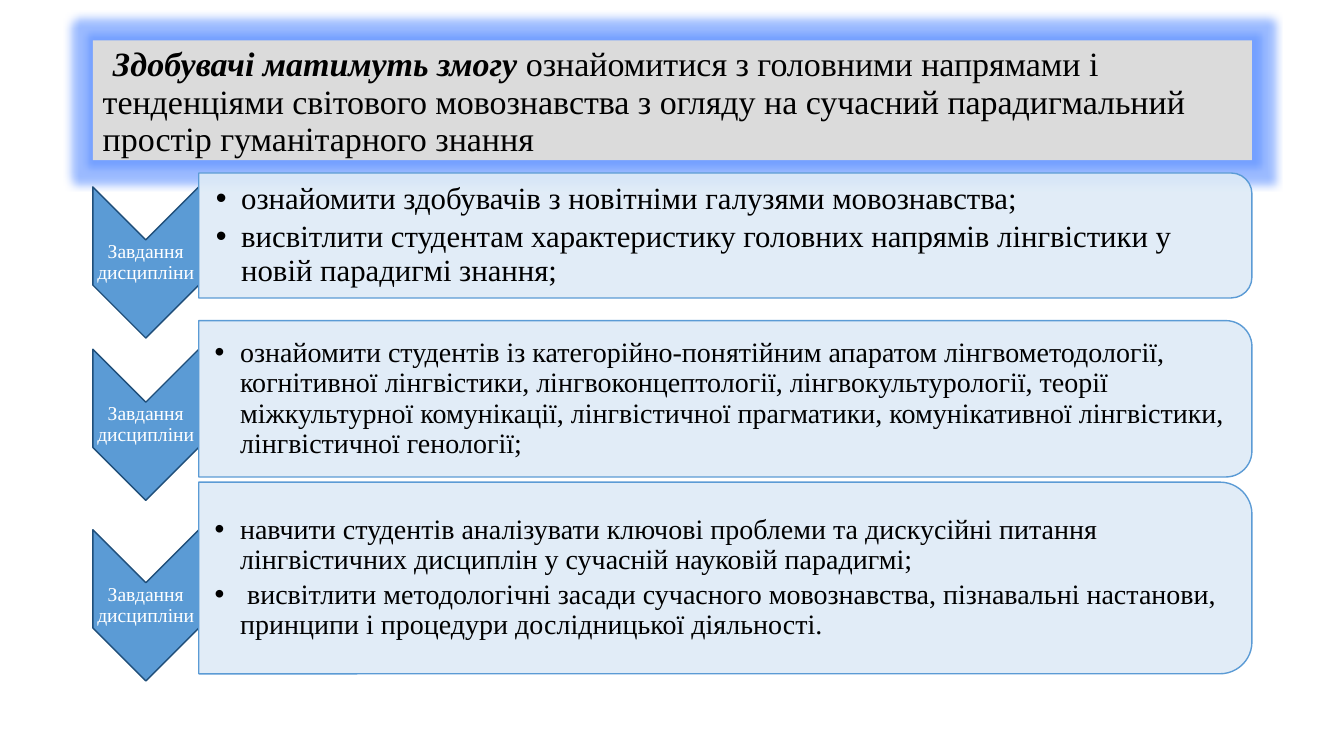
from lxml import etree
from pptx import Presentation
from pptx.dml.color import RGBColor
from pptx.enum.shapes import MSO_SHAPE
from pptx.enum.text import MSO_ANCHOR, PP_ALIGN
from pptx.oxml.ns import qn
from pptx.util import Cm, Pt

RECTANGLE = MSO_SHAPE.RECTANGLE
CHEVRON = MSO_SHAPE.CHEVRON
ROUND_TOP = MSO_SHAPE.ROUND_2_SAME_RECTANGLE
MIDDLE = MSO_ANCHOR.MIDDLE
LEFT, CENTER = PP_ALIGN.LEFT, PP_ALIGN.CENTER

BLACK = RGBColor(0x00, 0x00, 0x00)
WHITE = RGBColor(0xFF, 0xFF, 0xFF)
GREY = RGBColor(0xDB, 0xDB, 0xDB)
BLUE = RGBColor(0x5B, 0x9B, 0xD5)
NAVY = RGBColor(0x1F, 0x4E, 0x79)
PALE = RGBColor(0xDE, 0xEB, 0xF7)
GLOW = RGBColor(0x5B, 0x8F, 0xFF)
FONT = "Times New Roman"

HEADING = [
    (" ", 28.8, True),
    ("Здобувачі матимуть змогу ", 24.3, True),
    ("ознайомитися з головними напрямами і тенденціями світового мовознавства "
     "з огляду на сучасний парадигмальний простір гуманітарного знання", 24.3, False),
]
LABEL = "Завдання дисципліни"
TASKS = [
    {"arrow_top": 4.71, "top": 4.36, "height": 3.15, "size": 22, "indent": 0.43, "goals": [
        "ознайомити здобувачів з новітніми галузями мовознавства;",
        "висвітлити студентам характеристику головних напрямів лінгвістики у новій "
        "парадигмі знання;"]},
    {"arrow_top": 8.8, "top": 8.08, "height": 3.94, "size": 20, "indent": 0.4, "goals": [
        "ознайомити студентів із категорійно-понятійним апаратом лінгвометодології, "
        "когнітивної лінгвістики, лінгвоконцептології, лінгвокультурології, теорії "
        "міжкультурної комунікації, лінгвістичної прагматики, комунікативної лінгвістики, "
        "лінгвістичної генології;"]},
    {"arrow_top": 13.35, "top": 12.15, "height": 4.83, "size": 20, "indent": 0.4, "goals": [
        "навчити студентів аналізувати ключові проблеми та дискусійні питання "
        "лінгвістичних дисциплін у сучасній науковій парадигмі;",
        " висвітлити методологічні засади сучасного мовознавства, пізнавальні настанови, "
        "принципи і процедури дослідницької діяльності."]},
]

MARGIN, CONTENT_WIDTH = 2.34, 29.21
ARROW_WIDTH, ARROW_HEIGHT = 2.67, 3.81
PANEL_LEFT = MARGIN + ARROW_WIDTH
PANEL_WIDTH = CONTENT_WIDTH - ARROW_WIDTH
CORNER_INSET = 0.29 / 6


def add_alpha(color, percent):
    etree.SubElement(color, qn("a:alpha"), val=str(percent * 1000))


def add_quarter_turned(shapes, kind, left, top, width, height, fill, line):
    shape = shapes.add_shape(kind, Cm(left + (width - height) / 2),
                             Cm(top + (height - width) / 2), Cm(height), Cm(width))
    shape.rotation = 90
    shape.shadow.inherit = False
    shape.fill.solid()
    shape.fill.fore_color.rgb = fill
    shape.line.color.rgb = line
    shape.line.width = Pt(1)
    return shape


def add_text_area(shapes, left, top, width, height, inset, left_inset):
    frame = shapes.add_textbox(Cm(left), Cm(top), Cm(width), Cm(height)).text_frame
    frame.word_wrap = True
    frame.vertical_anchor = MIDDLE
    frame.margin_top = frame.margin_right = frame.margin_bottom = Cm(inset)
    frame.margin_left = Cm(left_inset)
    return frame


def add_run(paragraph, text, size, color, emphasis=False):
    paragraph.line_spacing = 0.9
    run = paragraph.add_run()
    run.text = text
    run.font.name = FONT
    run.font.size = Pt(size)
    run.font.color.rgb = color
    run.font.bold = run.font.italic = emphasis


def add_bullet(paragraph):
    properties = paragraph._p.get_or_add_pPr()
    properties.set("marL", str(Cm(0.64)))
    properties.set("indent", str(Cm(-0.64)))
    etree.SubElement(properties, qn("a:buFont"), typeface="Arial")
    etree.SubElement(properties, qn("a:buChar"), char="•")


def add_heading(shapes):
    heading = shapes.add_shape(RECTANGLE, Cm(MARGIN), Cm(1.02), Cm(CONTENT_WIDTH), Cm(3.02))
    heading.shadow.inherit = False
    heading.fill.solid()
    heading.fill.fore_color.rgb = GREY
    heading.line.fill.background()
    effects = heading._element.spPr.find(qn("a:effectLst"))
    glow = etree.SubElement(effects, qn("a:glow"), rad=str(Pt(11)))
    add_alpha(etree.SubElement(glow, qn("a:srgbClr"), val=str(GLOW)), 60)
    frame = heading.text_frame
    frame.word_wrap = True
    frame.vertical_anchor = MIDDLE
    paragraph = frame.paragraphs[0]
    paragraph.alignment = LEFT
    for text, size, emphasis in HEADING:
        add_run(paragraph, text, size, BLACK, emphasis)


def add_task(shapes, task):
    arrow_top, top, height = task["arrow_top"], task["top"], task["height"]
    add_quarter_turned(shapes, CHEVRON, MARGIN, arrow_top, ARROW_WIDTH, ARROW_HEIGHT, BLUE, NAVY)
    label = add_text_area(shapes, MARGIN, arrow_top + ARROW_WIDTH / 2, ARROW_WIDTH,
                          ARROW_HEIGHT - ARROW_WIDTH, 0.02, 0.02).paragraphs[0]
    label.alignment = CENTER
    add_run(label, LABEL, 14, WHITE)

    panel = add_quarter_turned(shapes, ROUND_TOP, PANEL_LEFT, top, PANEL_WIDTH, height, PALE, BLUE)
    add_alpha(panel._element.spPr.find(qn("a:solidFill"))[0], 90)
    inset = height * CORNER_INSET
    frame = add_text_area(shapes, PANEL_LEFT, top + inset, PANEL_WIDTH - inset,
                          height - 2 * inset, 0.04, task["indent"])
    for number, goal in enumerate(task["goals"]):
        paragraph = frame.add_paragraph() if number else frame.paragraphs[0]
        paragraph.space_after = Pt(task["size"] * 0.15)
        add_run(paragraph, goal, task["size"], BLACK)
        add_bullet(paragraph)


def main():
    deck = Presentation()
    deck.slide_width, deck.slide_height = Cm(33.87), Cm(19.05)
    shapes = deck.slides.add_slide(deck.slide_layouts[6]).shapes
    add_heading(shapes)
    for task in TASKS:
        add_task(shapes, task)
    deck.save("out.pptx")


if __name__ == "__main__":
    main()
